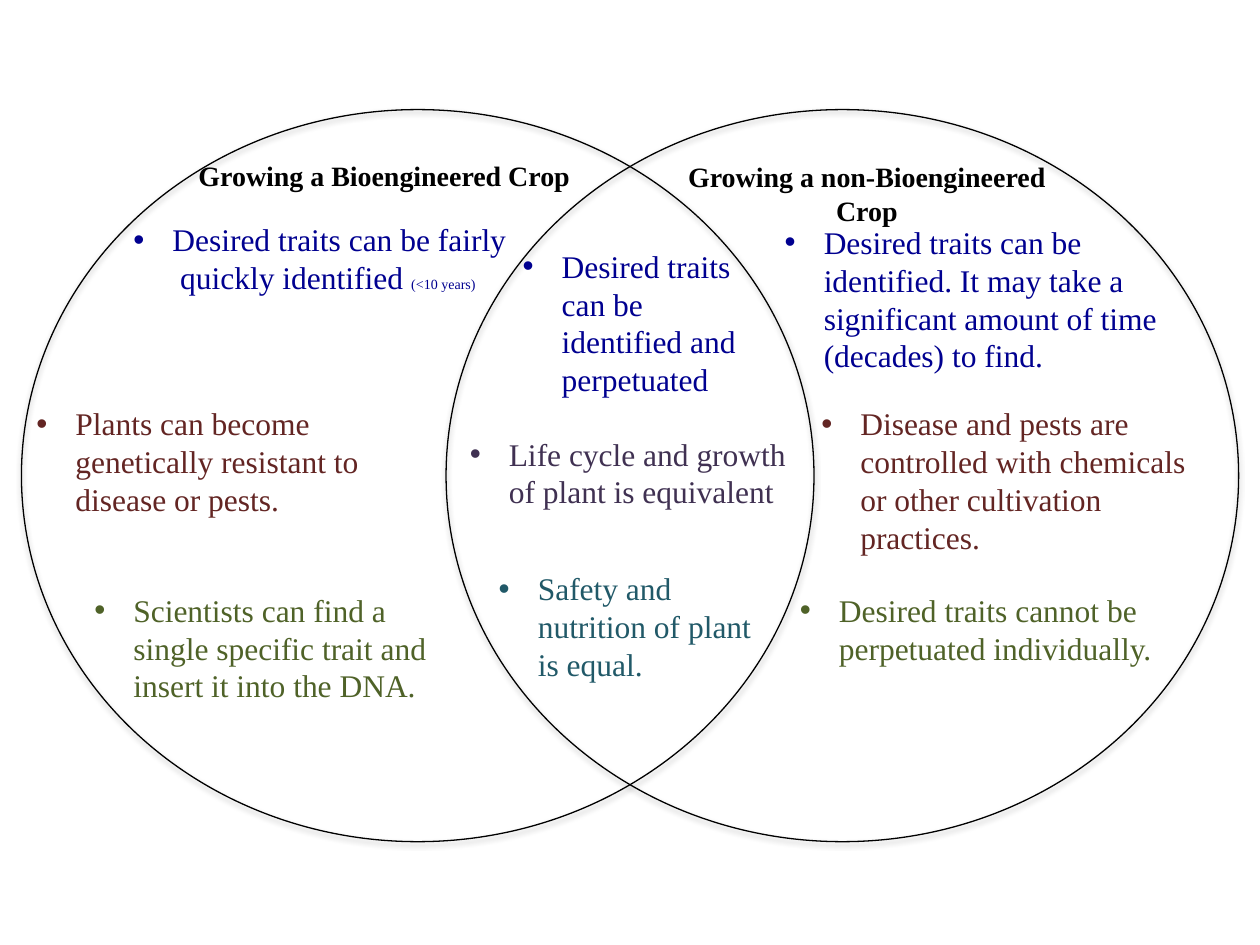
"""Build a Venn diagram slide comparing bioengineered and non-bioengineered crops."""
from typing import NamedTuple

from lxml.etree import SubElement
from pptx import Presentation
from pptx.dml.color import RGBColor
from pptx.enum.shapes import MSO_SHAPE
from pptx.enum.text import MSO_ANCHOR, MSO_AUTO_SIZE, PP_ALIGN
from pptx.oxml import parse_xml
from pptx.oxml.ns import nsdecls, qn
from pptx.slide import Slide
from pptx.text.text import TextFrame, _Paragraph
from pptx.util import Inches, Pt

BLACK = RGBColor(0x00, 0x00, 0x00)
NAVY = RGBColor(0x00, 0x00, 0x90)
MAROON = RGBColor(0x63, 0x25, 0x23)
OLIVE = RGBColor(0x4F, 0x62, 0x28)
TEAL = RGBColor(0x21, 0x59, 0x68)
PURPLE = RGBColor(0x40, 0x31, 0x52)

FONT = "Times New Roman"
CIRCLE_LEFTS = (0.17, 3.54)
CIRCLE_TOP, CIRCLE_WIDTH, CIRCLE_HEIGHT = 0.87, 6.29, 5.81
HEADING_FORMAT = {"name": FONT, "size": Pt(16), "bold": True}
POINT_FORMAT = {"name": FONT, "size": Pt(18)}
NOTE_FORMAT = {"name": FONT, "size": Pt(8)}


class Heading(NamedTuple):
    left: float
    top: float
    text: str


class Point(NamedTuple):
    left: float
    top: float
    width: float
    height: float
    color: RGBColor
    lines: tuple[str, ...]
    note: str = ""


HEADINGS = (
    Heading(1.36, 1.21, "Growing a Bioengineered Crop"),
    Heading(5.19, 1.22, "Growing a non-Bioengineered Crop"),
)
POINTS = (
    Point(6.13, 1.72, 3.56, 1.31, NAVY, (
        "Desired traits can be identified. It may take a significant "
        "amount of time (decades) to find.",)),
    Point(4.05, 1.91, 1.97, 1.31, NAVY, (
        "Desired traits can be identified and perpetuated",)),
    Point(0.96, 1.7, 3.19, 0.71, NAVY, (
        "Desired traits can be fairly", " quickly identified "), "(<10 years)"),
    Point(0.19, 3.16, 3.35, 1.01, MAROON, (
        "Plants can become genetically resistant to disease or pests.",)),
    Point(0.65, 4.64, 3.08, 1.01, OLIVE, (
        "Scientists can find a single specific trait and insert it into the DNA.",)),
    Point(6.25, 4.64, 3.44, 0.71, OLIVE, (
        "Desired traits cannot be perpetuated individually.",)),
    Point(6.42, 3.16, 3.27, 1.31, MAROON, (
        "Disease and pests are controlled with chemicals or other "
        "cultivation practices.",)),
    Point(3.86, 4.47, 2.39, 1.01, TEAL, (
        "Safety and nutrition of plant is equal.",)),
    Point(3.63, 3.4, 2.79, 0.71, PURPLE, (
        "Life cycle and growth of plant is equivalent",)),
)


def draw_circle(slide: Slide, left: float) -> None:
    circle = slide.shapes.add_shape(
        MSO_SHAPE.OVAL, Inches(left), Inches(CIRCLE_TOP),
        Inches(CIRCLE_WIDTH), Inches(CIRCLE_HEIGHT))
    circle.fill.background()
    circle.line.color.rgb = BLACK
    circle.line.width = Pt(0.75)
    circle.shadow.inherit = False
    effects = circle._element.spPr.find(qn("a:effectLst"))
    effects.append(parse_xml(
        f'<a:outerShdw {nsdecls("a")} blurRad="{Pt(3.1)}" dist="{Pt(1.8)}" '
        'dir="5400000" rotWithShape="0"><a:srgbClr val="000000">'
        '<a:alpha val="35000"/></a:srgbClr></a:outerShdw>'))


def add_frame(slide: Slide, left: float, top: float,
              width: float, height: float, autofit: MSO_AUTO_SIZE) -> TextFrame:
    frame = slide.shapes.add_textbox(
        Inches(left), Inches(top), Inches(width), Inches(height)).text_frame
    settings = {"word_wrap": True, "auto_size": autofit,
                "vertical_anchor": MSO_ANCHOR.TOP}
    for name, value in settings.items():
        setattr(frame, name, value)
    return frame


def add_words(paragraph: _Paragraph, words: str, color: RGBColor, style: dict) -> None:
    run = paragraph.add_run()
    run.text = words
    for name, value in style.items():
        setattr(run.font, name, value)
    run.font.color.rgb = color


def add_bullet(paragraph: _Paragraph) -> None:
    properties = paragraph._p.get_or_add_pPr()
    properties.set("marL", str(Inches(0.31)))
    properties.set("indent", str(Inches(-0.31)))
    SubElement(properties, qn("a:buFont"), typeface="Arial")
    SubElement(properties, qn("a:buChar"), char="•")


def draw_heading(slide: Slide, heading: Heading) -> None:
    frame = add_frame(slide, heading.left, heading.top, 3.38, 0.62, MSO_AUTO_SIZE.NONE)
    paragraph = frame.paragraphs[0]
    paragraph.alignment = PP_ALIGN.CENTER
    add_words(paragraph, heading.text, BLACK, HEADING_FORMAT)


def draw_point(slide: Slide, point: Point) -> None:
    frame = add_frame(slide, point.left, point.top, point.width, point.height,
                      MSO_AUTO_SIZE.SHAPE_TO_FIT_TEXT)
    paragraph = frame.paragraphs[0]
    add_bullet(paragraph)
    for index, line in enumerate(point.lines):
        if index:
            paragraph.add_line_break()
        add_words(paragraph, line, point.color, POINT_FORMAT)
    if point.note:
        add_words(paragraph, point.note, point.color, NOTE_FORMAT)


def main() -> None:
    presentation = Presentation()
    presentation.slide_width = Inches(10)
    presentation.slide_height = Inches(7.5)
    slide = presentation.slides.add_slide(presentation.slide_layouts[6])
    for left in CIRCLE_LEFTS:
        draw_circle(slide, left)
    for heading in HEADINGS:
        draw_heading(slide, heading)
    for point in POINTS:
        draw_point(slide, point)
    presentation.save("out.pptx")


if __name__ == "__main__":
    main()
